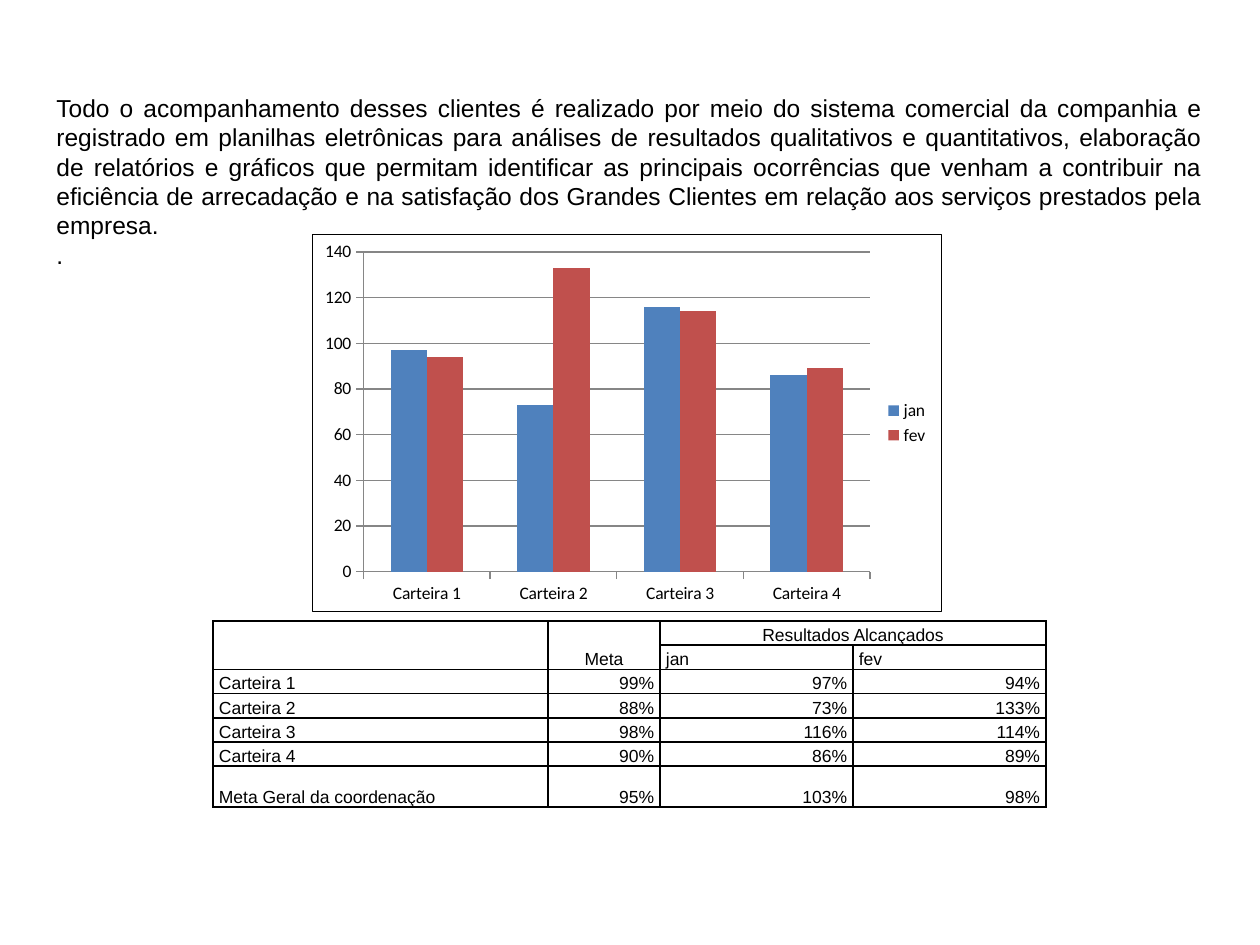
from lxml.etree import SubElement
from pptx import Presentation
from pptx.chart.data import CategoryChartData
from pptx.dml.color import RGBColor
from pptx.enum.chart import XL_CHART_TYPE as ChartType, XL_LEGEND_POSITION as LegendPosition
from pptx.enum.chart import XL_TICK_MARK as TickMark
from pptx.enum.text import MSO_ANCHOR as Anchor, MSO_AUTO_SIZE as AutoSize, PP_ALIGN as Align
from pptx.oxml import parse_xml
from pptx.oxml.ns import nsdecls, qn
from pptx.util import Pt

PX = 914400 // 126
BLACK = RGBColor(0x00, 0x00, 0x00)
GRAY = RGBColor(0x86, 0x86, 0x86)
BLUE = RGBColor(0x4F, 0x81, 0xBD)
RED = RGBColor(0xC0, 0x50, 0x4D)

INTRO = [
    "Todo o acompanhamento desses clientes é realizado por meio do sistema comercial da companhia "
    "e registrado em planilhas eletrônicas para análises de resultados qualitativos e quantitativos, "
    "elaboração de relatórios e gráficos que permitam identificar as principais ocorrências que "
    "venham a contribuir na eficiência de arrecadação e na satisfação dos Grandes Clientes em relação "
    "aos serviços prestados pela empresa.",
    ".",
]
MONTHS = ("jan", "fev")
GOALS = [
    ("Carteira 1", 99, 97, 94),
    ("Carteira 2", 88, 73, 133),
    ("Carteira 3", 98, 116, 114),
    ("Carteira 4", 90, 86, 89),
]
OVERALL = ("Meta Geral da coordenação", 95, 103, 98)
HEADER = [("", "Meta", "Resultados Alcançados", ""), ("", "") + MONTHS]
MERGES = [((0, 0), (1, 0)), ((0, 1), (1, 1)), ((0, 2), (0, 3))]
COLUMNS = (335, 112, 193, 193)
ROWS = (24,) * 6 + (41,)


def px(*lengths):
    return [length * PX for length in lengths]


def add_intro(page):
    box = page.shapes.add_textbox(*px(44, 86, 1171, 190))
    frame = box.text_frame
    frame.word_wrap = True
    frame.auto_size = AutoSize.SHAPE_TO_FIT_TEXT
    frame.vertical_anchor = Anchor.MIDDLE
    frame.text = "\n".join(INTRO)
    for para in frame.paragraphs:
        para.alignment = Align.JUSTIFY
        style_font(para.font, "Arial", 14)


def style_font(font, name, size):
    font.name, font.size = name, Pt(size)
    font.color.rgb = BLACK


def add_results_chart(page):
    data = CategoryChartData()
    data.categories = [row[0] for row in GOALS]
    for index, month in enumerate(MONTHS, 2):
        data.add_series(month, [row[index] for row in GOALS])
    chart = page.shapes.add_chart(ChartType.COLUMN_CLUSTERED, *px(312, 234, 630, 378), data).chart
    style_font(chart.font, "Calibri", 10)
    chart.has_title = False
    chart.has_legend = True
    chart.legend.position = LegendPosition.RIGHT
    chart.legend.include_in_layout = False
    plot = chart.plots[0]
    plot.gap_width, plot.overlap = 150, 0
    plot.vary_by_categories = False
    for series, color in zip(plot.series, (BLUE, RED)):
        series.format.fill.solid()
        series.format.fill.fore_color.rgb = color
    for axis in (chart.category_axis, chart.value_axis):
        axis.major_tick_mark = TickMark.OUTSIDE
        axis.format.line.color.rgb = GRAY
    chart.value_axis.has_major_gridlines = True
    chart.value_axis.major_gridlines.format.line.color.rgb = GRAY
    frame = parse_xml(
        f'<c:spPr {nsdecls("c", "a")}><a:noFill/><a:ln w="9525"><a:solidFill>'
        f'<a:srgbClr val="{BLACK}"/></a:solidFill></a:ln></c:spPr>'
    )
    chart.element.find(qn("c:chart")).addnext(frame)


def add_borders(cell):
    properties = cell._tc.get_or_add_tcPr()
    for position, side in enumerate(("lnL", "lnR", "lnT", "lnB")):
        line = parse_xml(
            f'<a:{side} {nsdecls("a")} w="12700"><a:solidFill>'
            f'<a:srgbClr val="{BLACK}"/></a:solidFill></a:{side}>'
        )
        properties.insert(position, line)


def fill_cell(cell, value):
    cell.margin_left = cell.margin_right = 6 * PX
    cell.margin_top = cell.margin_bottom = 0
    cell.vertical_anchor = Anchor.BOTTOM
    cell.fill.background()
    add_borders(cell)
    para = cell.text_frame.paragraphs[0]
    para.line_spacing = 1.15
    if value == "":
        SubElement(para._p, qn("a:endParaRPr"), sz="1000")
        return
    if isinstance(value, int):
        para.text = f"{value}%"
        para.alignment = Align.RIGHT
    else:
        para.text = value
        para.alignment = Align.CENTER if value in HEADER[0] else Align.LEFT
    style_font(para.font, "Arial", 10)


def add_goals_table(page):
    place = px(213, 621, sum(COLUMNS), sum(ROWS))
    table = page.shapes.add_table(len(ROWS), len(COLUMNS), *place).table
    table.first_row = table.horz_banding = False
    for column, width in zip(table.columns, COLUMNS):
        column.width = width * PX
    for row, height in zip(table.rows, ROWS):
        row.height = height * PX
    for row, values in zip(table.rows, HEADER + GOALS + [OVERALL]):
        for cell, value in zip(row.cells, values):
            fill_cell(cell, value)
    for first, last in MERGES:
        table.cell(*first).merge(table.cell(*last))


def main():
    """Build the slide on large-client results against goals."""
    deck = Presentation()
    deck.slide_width, deck.slide_height = px(1260, 945)
    page = deck.slides.add_slide(deck.slide_layouts[6])
    add_intro(page)
    add_goals_table(page)
    add_results_chart(page)
    deck.save("out.pptx")


if __name__ == "__main__":
    main()
